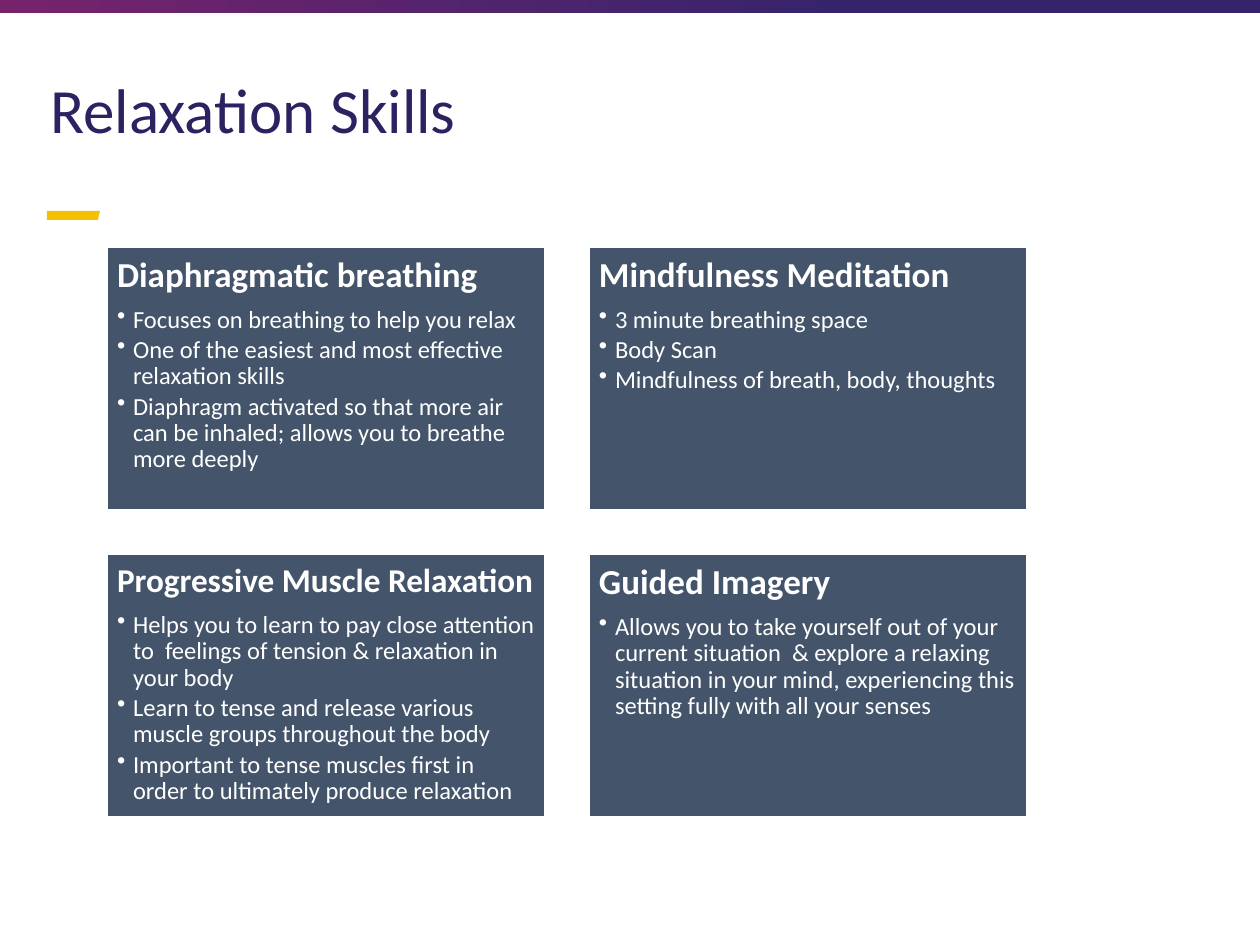
from lxml import etree
from pptx import Presentation, util as u
from pptx.dml.color import RGBColor
from pptx.enum import shapes, text
from pptx.oxml.ns import qn

TITLE = "Relaxation Skills"
# heading, heading size in points, bullets
SKILLS = [
    ("Diaphragmatic breathing", 20, [
        "Focuses on breathing to help you relax",
        "One of the easiest and most effective relaxation skills",
        "Diaphragm activated so that more air can be inhaled; allows you to breathe more deeply"]),
    ("Mindfulness Meditation", 20, [
        "3 minute breathing space",
        "Body Scan",
        "Mindfulness of breath, body, thoughts"]),
    ("Progressive Muscle Relaxation", 19, [
        "Helps you to learn to pay close attention to  feelings of tension & relaxation in your body",
        "Learn to tense and release various muscle groups throughout the body",
        "Important to tense muscles first in order to ultimately produce relaxation"]),
    ("Guided Imagery", 20, [
        "Allows you to take yourself out of your current situation  & explore a relaxing "
        "situation in your mind, experiencing this setting fully with all your senses"]),
]

WHITE = RGBColor(0xFF, 0xFF, 0xFF)
NAVY = RGBColor(0x2E, 0x21, 0x61)
INDIGO = RGBColor(0x35, 0x24, 0x6C)
PLUM = RGBColor(0x77, 0x23, 0x6C)
GOLD = RGBColor(0xF5, 0xC0, 0x01)
SLATE = RGBColor(0x44, 0x54, 0x6A)

PX = 914400 // 126
CARD_LEFT, CARD_TOP, CARD_W, CARD_H, GAP = 107, 247, 438, 263, 44
INSET, INDENT = 10, 16


def px(*lengths):
    return [u.Emu(length * PX) for length in lengths]


def write(frame, words, size, color, bold=False, after=0, bullet=False):
    """Fill the empty first paragraph of the frame, or add one below."""
    first = frame.paragraphs[0]
    para = frame.add_paragraph() if first.runs else first
    if bullet:
        para.level = 1
        props = para._p.get_or_add_pPr()
        props.set("marL", str(INDENT * PX))
        props.set("indent", str(-INDENT * PX))
        etree.SubElement(props, qn("a:buChar")).set("char", "•")
    para.alignment = text.PP_ALIGN.LEFT
    para.line_spacing = 0.9
    para.space_after = u.Pt(after)
    run = para.add_run()
    run.text = words
    run.font.name = "Calibri"
    run.font.size = u.Pt(size)
    run.font.bold = bold
    run.font.color.rgb = color


prs = Presentation()
prs.slide_width, prs.slide_height = px(1260, 945)
slide = prs.slides.add_slide(prs.slide_layouts[6])

# Gradient band along the top edge
band = slide.shapes.add_shape(shapes.MSO_SHAPE.RECTANGLE, *px(-3, 0, 1266, 13))
band.shadow.inherit = False
band.line.fill.background()
band.fill.gradient()
band.fill.gradient_angle = 0
for stop, (position, color) in zip(band.fill.gradient_stops, [(0, PLUM), (0.67, INDIGO)]):
    stop.position = position
    stop.color.rgb = color

# Gold accent with a slanted end
builder = slide.shapes.build_freeform(47, 211, scale=PX)
builder.add_line_segments([(100, 211), (98, 220), (47, 220)], close=True)
accent = builder.convert_to_shape()
accent.shadow.inherit = False
accent.fill.solid()
accent.fill.fore_color.rgb = GOLD
accent.line.fill.background()

# Title
title = slide.shapes.add_textbox(*px(38, 73, 1180, 120)).text_frame
title.word_wrap = True
write(title, TITLE, 36, NAVY)

# Two-by-two grid of skill cards
for index, (heading, size, bullets) in enumerate(SKILLS):
    row, column = divmod(index, 2)
    card = slide.shapes.add_shape(
        shapes.MSO_SHAPE.RECTANGLE,
        *px(CARD_LEFT + column * (CARD_W + GAP), CARD_TOP + row * (CARD_H + GAP), CARD_W, CARD_H))
    card.shadow.inherit = False
    card.fill.solid()
    card.fill.fore_color.rgb = SLATE
    card.line.color.rgb = WHITE
    card.line.width = u.Pt(1)
    frame = card.text_frame
    frame.word_wrap = True
    frame.vertical_anchor = text.MSO_ANCHOR.TOP
    frame.margin_left, frame.margin_top, frame.margin_right, frame.margin_bottom = px(*[INSET] * 4)
    write(frame, heading, size, WHITE, bold=True, after=7)
    for bullet in bullets:
        write(frame, bullet, 14, WHITE, after=2.1, bullet=True)

prs.save("out.pptx")
